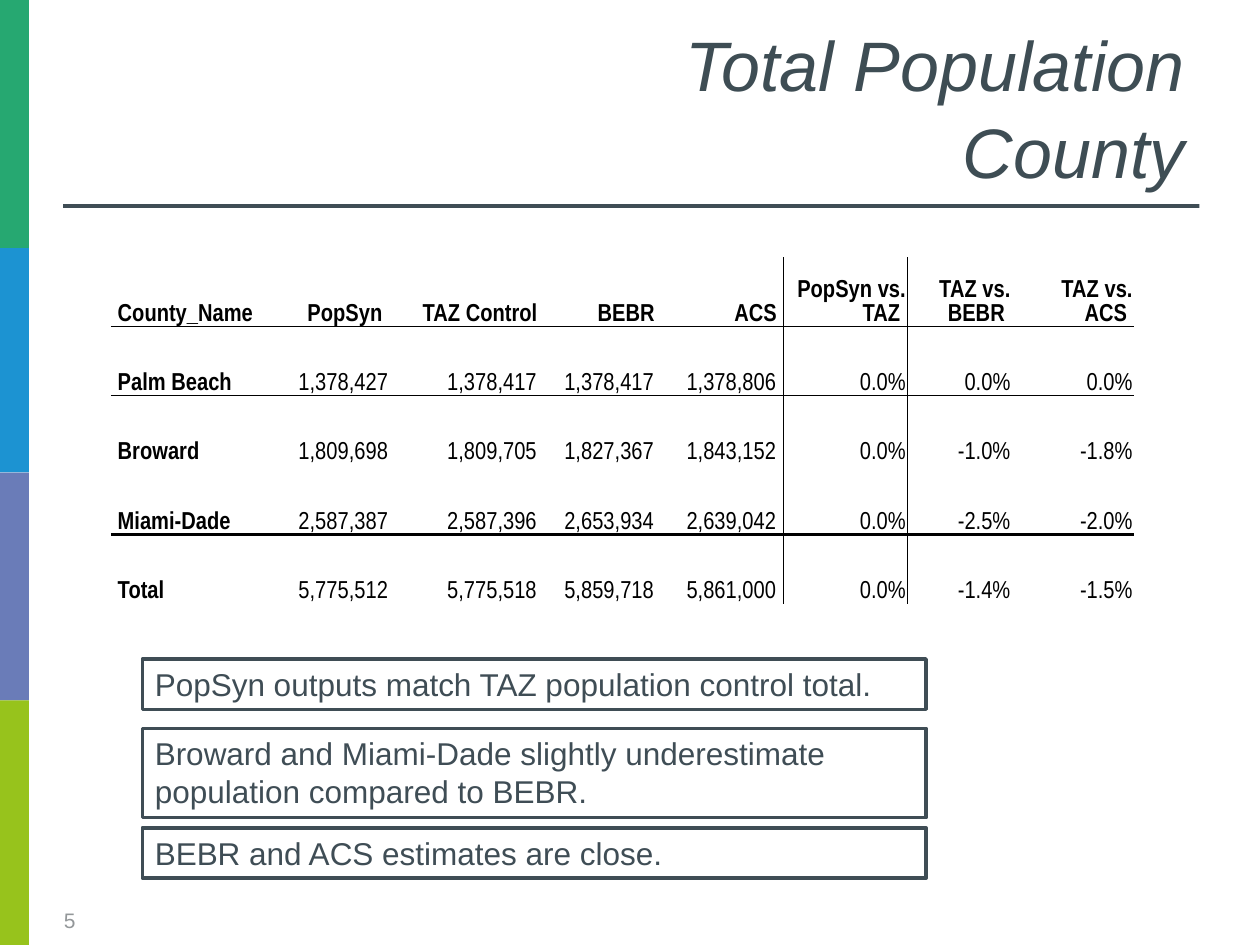
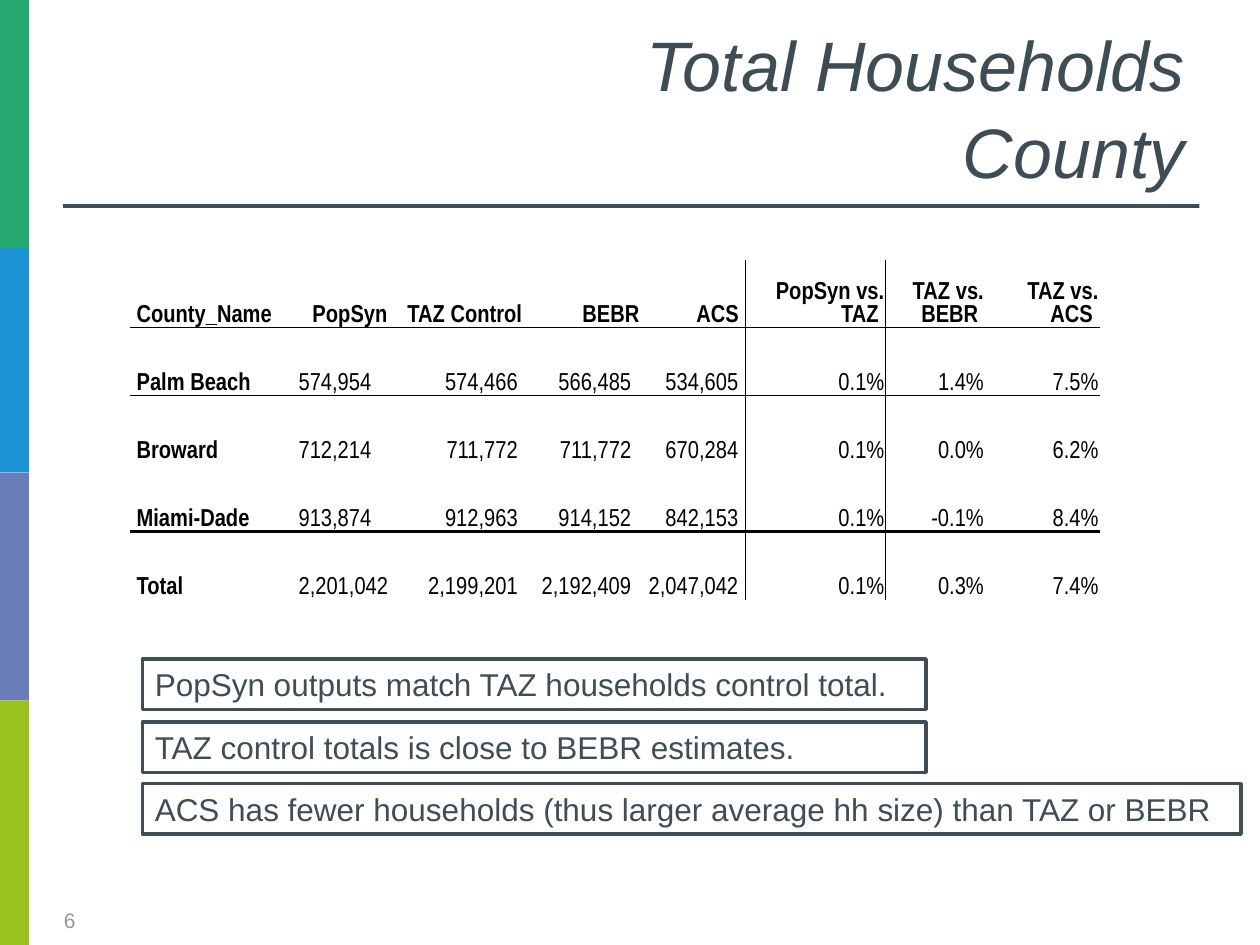
from itertools import pairwise

from lxml import etree
from pptx import Presentation
from pptx.dml.color import RGBColor
from pptx.enum.shapes import MSO_SHAPE as Shape
from pptx.enum.text import MSO_ANCHOR as Anchor, MSO_AUTO_SIZE as AutoSize, PP_ALIGN as Align
from pptx.oxml.ns import qn
from pptx.util import Inches, Pt

BLACK = RGBColor(0x00, 0x00, 0x00)
WHITE = RGBColor(0xFF, 0xFF, 0xFF)
SLATE = RGBColor(0x3F, 0x4D, 0x55)
TITLE_SLATE = RGBColor(0x3E, 0x4D, 0x54)
GRAY = RGBColor(0x93, 0x97, 0x99)
BAND_COLORS = [
    RGBColor(0x26, 0xA8, 0x71),
    RGBColor(0x1C, 0x93, 0xD2),
    RGBColor(0x6A, 0x7C, 0xB8),
    RGBColor(0x97, 0xC3, 0x1C),
]
BAND_EDGES = [0, 1.97, 3.75, 5.56, 7.5]
PLAIN_TABLE_STYLE = "{2D5ABB26-0587-4C30-8999-92F81FD0307C}"

HEADER = ["County_Name", "PopSyn", "TAZ Control", "BEBR", "ACS",
          "PopSyn vs. TAZ", "TAZ vs. BEBR", "TAZ vs. ACS"]
LAST_COUNT_COLUMN = HEADER.index("ACS")
HEADER_RULE, TOTAL_RULE, DIVIDER = 1, 2, 0.5
CELL_INSET = 0.01

POPULATION = [
    ["Palm Beach", "1,378,427", "1,378,417", "1,378,417", "1,378,806", "0.0%", "0.0%", "0.0%"],
    ["Broward", "1,809,698", "1,809,705", "1,827,367", "1,843,152", "0.0%", "-1.0%", "-1.8%"],
    ["Miami-Dade", "2,587,387", "2,587,396", "2,653,934", "2,639,042", "0.0%", "-2.5%", "-2.0%"],
    ["Total", "5,775,512", "5,775,518", "5,859,718", "5,861,000", "0.0%", "-1.4%", "-1.5%"],
]
HOUSEHOLDS = [
    ["Palm Beach", "574,954", "574,466", "566,485", "534,605", "0.1%", "1.4%", "7.5%"],
    ["Broward", "712,214", "711,772", "711,772", "670,284", "0.1%", "0.0%", "6.2%"],
    ["Miami-Dade", "913,874", "912,963", "914,152", "842,153", "0.1%", "-0.1%", "8.4%"],
    ["Total", "2,201,042", "2,199,201", "2,192,409", "2,047,042", "0.1%", "0.3%", "7.4%"],
]


class CountyDeck:
    def __init__(self):
        self.deck = Presentation()
        self.deck.slide_width = Inches(10)
        self.deck.slide_height = Inches(7.5)
        self.slide = None

    def start_slide(self, title_lines, number):
        self.slide = self.deck.slides.add_slide(self.deck.slide_layouts[5])
        for color, (top, bottom) in zip(BAND_COLORS, pairwise(BAND_EDGES)):
            self.box(0, top, 0.23, bottom - top, color)
        self.box(0.5, 1.62, 9.02, 0.03, SLATE)
        self.title(title_lines)
        self.page_number(number)

    def styled_run(self, paragraph, text, size, color, font="Arial", bold=False, italic=False):
        run = paragraph.add_run()
        run.text = text
        run.font.name = font
        run.font.size = Pt(size)
        run.font.bold = bold
        run.font.italic = italic
        run.font.color.rgb = color

    def box(self, left, top, width, height, color):
        box = self.slide.shapes.add_shape(
            Shape.RECTANGLE, Inches(left), Inches(top), Inches(width), Inches(height))
        box.shadow.inherit = False
        box.fill.solid()
        box.fill.fore_color.rgb = color
        box.line.fill.background()
        return box

    def title(self, lines):
        title = self.slide.shapes.title
        title.left, title.top = Inches(0.5), Inches(-0.01)
        title.width, title.height = Inches(9), Inches(1.59)
        frame = title.text_frame
        frame.auto_size = AutoSize.NONE
        frame.vertical_anchor = Anchor.BOTTOM
        paragraph = frame.paragraphs[0]
        paragraph.alignment = Align.RIGHT
        paragraph.line_spacing = 1.04
        for index, line in enumerate(lines):
            if index:
                paragraph.add_line_break()
            self.styled_run(paragraph, line, 40, TITLE_SLATE, italic=True)

    def page_number(self, number):
        footer = self.slide.shapes.add_textbox(
            Inches(0.41), Inches(7.1), Inches(0.73), Inches(0.4))
        frame = footer.text_frame
        frame.word_wrap = True
        frame.vertical_anchor = Anchor.MIDDLE
        self.styled_run(frame.paragraphs[0], str(number), 12, GRAY)

    def finding(self, text, top, width=6.22, height=0.4):
        finding = self.box(1.13, top, width, height, WHITE)
        finding.line.color.rgb = SLATE
        finding.line.width = Pt(2)
        frame = finding.text_frame
        frame.word_wrap = True
        frame.auto_size = AutoSize.SHAPE_TO_FIT_TEXT
        frame.vertical_anchor = Anchor.TOP
        paragraph = frame.paragraphs[0]
        paragraph.alignment = Align.LEFT
        self.styled_run(paragraph, text, 18, SLATE)

    def border(self, cell, edge, points):
        line = etree.Element(qn(f"a:{edge}"), w=str(Pt(points)))
        fill = etree.SubElement(line, qn("a:solidFill"))
        etree.SubElement(fill, qn("a:srgbClr"), val=str(BLACK))
        properties = cell._tc.get_or_add_tcPr()
        position = sum(child.tag.startswith(qn("a:ln")) for child in properties)
        properties.insert(position, line)

    def cell_borders(self, cell, row, column):
        if column == LAST_COUNT_COLUMN + 1:
            self.border(cell, "lnL", DIVIDER)
        if column == LAST_COUNT_COLUMN:
            self.border(cell, "lnR", DIVIDER)
        rules = {0: HEADER_RULE, 3: TOTAL_RULE}
        if row - 1 in rules:
            self.border(cell, "lnT", rules[row - 1])
        if row in rules:
            self.border(cell, "lnB", rules[row])

    def county_table(self, counties, left, top, widths, row_height, right_insets, popsyn_align):
        rows = [HEADER] + counties
        frame = self.slide.shapes.add_table(
            len(rows), len(HEADER), Inches(left), Inches(top),
            Inches(sum(widths)), Inches(row_height * len(rows)))
        table = frame.table
        table.first_row = table.horz_banding = False
        table._tbl.tblPr.find(qn("a:tableStyleId")).text = PLAIN_TABLE_STYLE
        for column, width in zip(table.columns, widths):
            column.width = Inches(width)
        for row, values in enumerate(rows):
            table.rows[row].height = Inches(row_height)
            for column, value in enumerate(values):
                cell = table.cell(row, column)
                cell.fill.background()
                cell.vertical_anchor = Anchor.BOTTOM
                cell.margin_left = cell.margin_top = Inches(CELL_INSET)
                cell.margin_right = Inches(right_insets[column] if row else CELL_INSET)
                cell.margin_bottom = 0
                paragraph = cell.text_frame.paragraphs[0]
                if column == 0:
                    paragraph.alignment = Align.LEFT
                    value = f" {value}"
                elif row == 0:
                    paragraph.alignment = Align.RIGHT
                    value = f" {value} "
                else:
                    paragraph.alignment = popsyn_align if column == 1 else Align.RIGHT
                self.styled_run(paragraph, value, 14, BLACK, "Arial Narrow",
                                bold=row == 0 or column == 0)
                self.cell_borders(cell, row, column)


def main():
    county = CountyDeck()

    county.start_slide(["Total Population", "County"], 5)
    county.county_table(
        POPULATION, 0.88, 2.04, [1.35, 0.86, 1.23, 0.93, 0.97, 0.98, 0.83, 0.97], 0.55,
        [0.01, 0.01, 0.06, 0.06, 0.06, 0.01, 0.01, 0.01], Align.RIGHT)
    county.finding("PopSyn outputs match TAZ population control total.", 5.23)
    county.finding("Broward and Miami-Dade slightly underestimate population compared to BEBR.",
                   5.78, height=0.71)
    county.finding("BEBR and ACS estimates are close.", 6.57)

    county.start_slide(["Total Households", "County"], 6)
    county.county_table(
        HOUSEHOLDS, 1.03, 2.06, [1.33, 0.77, 1.07, 0.93, 0.79, 1.11, 0.79, 0.91], 0.54,
        [0.01, 0.01, 0.09, 0.12, 0.06, 0.01, 0.01, 0.01], Align.LEFT)
    county.finding("PopSyn outputs match TAZ households control total.", 5.23)
    county.finding("TAZ control totals is close to BEBR estimates.", 5.73)
    county.finding("ACS has fewer households (thus larger average hh size) than TAZ or BEBR",
                   6.22, width=8.72)

    county.deck.save("out.pptx")


if __name__ == "__main__":
    main()
